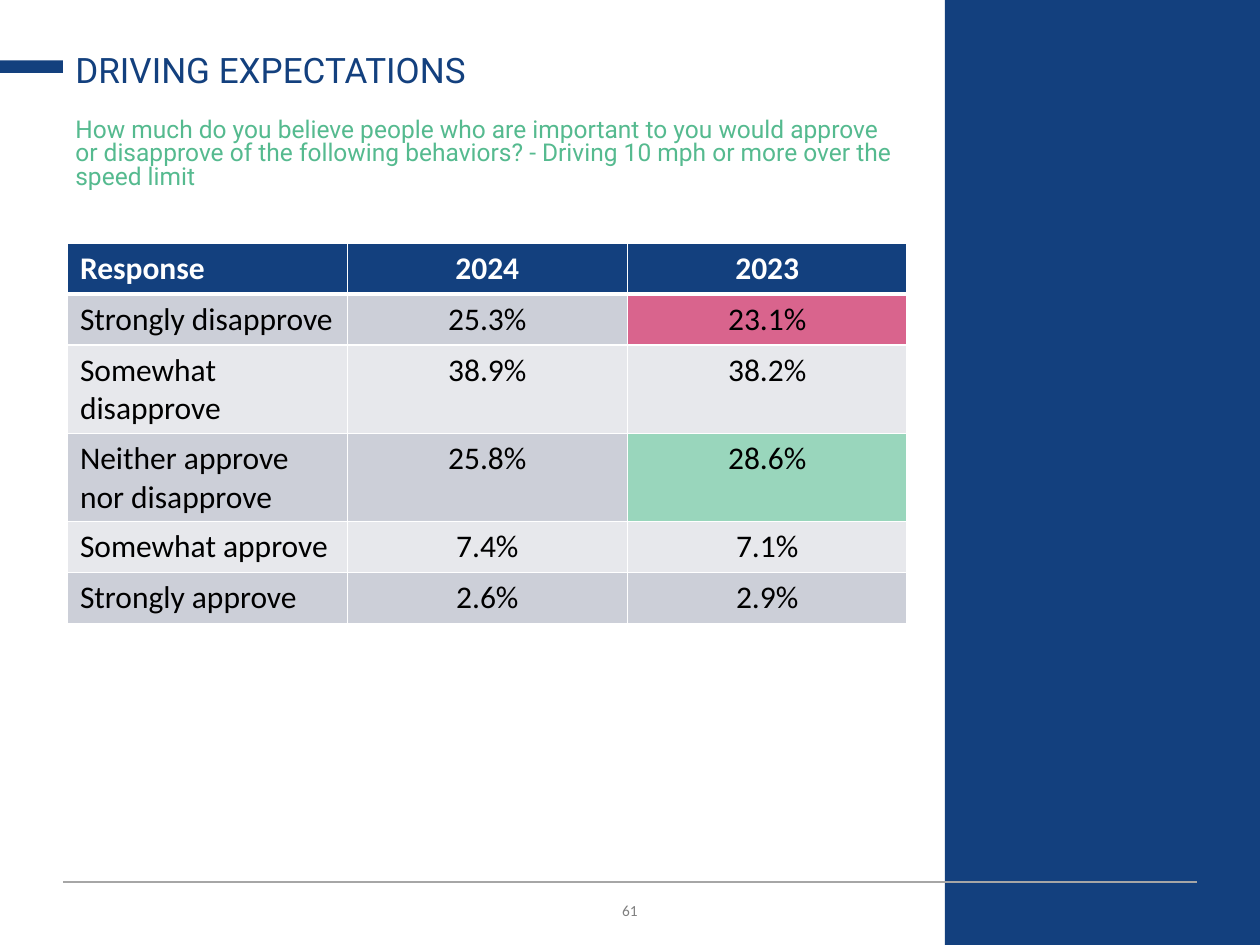
import dataclasses

import lxml.etree
import pptx
import pptx.dml.color
import pptx.enum.shapes
import pptx.enum.text
import pptx.oxml
import pptx.oxml.ns
import pptx.util

ALIGN = pptx.enum.text.PP_ALIGN
ANCHOR = pptx.enum.text.MSO_ANCHOR
COLUMNS, ROWS = 20, 15
WIDTH, HEIGHT = pptx.util.Inches(10), pptx.util.Inches(7.5)

RESPONSES = [
    ("Response", "2024", "2023"),
    ("Strongly disapprove", "25.3%", "23.1%"),
    ("Somewhat disapprove", "38.9%", "38.2%"),
    ("Neither approve nor disapprove", "25.8%", "28.6%"),
    ("Somewhat approve", "7.4%", "7.1%"),
    ("Strongly approve", "2.6%", "2.9%"),
]


@dataclasses.dataclass(frozen=True)
class Theme:
    """Colours, fonts and type sizes of the slide."""

    navy: str = "13407E"
    green: str = "55BA8F"
    white: str = "FFFFFF"
    black: str = "000000"
    rule: str = "A6A6A6"
    footer: str = "808080"
    bands: tuple = ("E7E8EC", "CCCFD8")
    lower: str = "D9648D"
    higher: str = "99D6BC"
    heading_font: str = "Roboto"
    body_font: str = "Calibri"
    title_size: int = 20
    question_size: int = 14
    table_size: int = 18
    footer_size: int = 11


THEME = Theme()
HIGHLIGHTS = {(1, 2): THEME.lower, (3, 2): THEME.higher}


def across(columns):
    """Return the width of a number of grid columns."""
    return round(WIDTH * columns / COLUMNS)


def down(rows):
    """Return the height of a number of grid rows."""
    return round(HEIGHT * rows / ROWS)


def area(column, row, columns, rows):
    """Return left, top, width and height of a grid area."""
    return across(column), down(row), across(columns), down(rows)


def rgb(value):
    """Return a colour from its hex value."""
    return pptx.dml.color.RGBColor.from_string(value)


def apply(target, values):
    """Set each named value on the target."""
    for name, value in values.items():
        setattr(target, name, value)


def write(frame, text, font, size, color, bold=False, **layout):
    """Write one formatted paragraph into a text frame and return it."""
    paragraph = frame.paragraphs[0]
    line = paragraph.add_run()
    line.text = text
    apply(paragraph, layout)
    apply(line.font, {"name": font, "size": pptx.util.Pt(size), "bold": bold})
    line.font.color.rgb = rgb(color)
    return line


def add_label(slide, place, anchor, *content, **layout):
    """Add a wrapped text box and return its run."""
    frame = slide.shapes.add_textbox(*place).text_frame
    apply(frame, {"word_wrap": True, "vertical_anchor": anchor})
    return write(frame, *content, **layout)


def add_block(slide, place):
    """Add a plain navy rectangle."""
    block = slide.shapes.add_shape(pptx.enum.shapes.MSO_SHAPE.RECTANGLE, *place)
    block.shadow.inherit = False
    block.fill.solid()
    block.fill.fore_color.rgb = rgb(THEME.navy)
    block.line.fill.background()


def add_rule(slide, start, end, row):
    """Add a thin horizontal line between two columns."""
    rule = slide.shapes.add_connector(
        pptx.enum.shapes.MSO_CONNECTOR.STRAIGHT,
        across(start), down(row), across(end), down(row))
    rule.line.color.rgb = rgb(THEME.rule)
    rule.line.width = pptx.util.Pt(0.75)
    lxml.etree.SubElement(
        rule.element.spPr, pptx.oxml.ns.qn("a:effectLst"))


def add_borders(cell, widths):
    """Draw white cell borders from a dict of sides and point widths."""
    properties = cell._tc.get_or_add_tcPr()
    for position, (side, width) in enumerate(widths.items()):
        border = pptx.oxml.parse_xml(
            f'<a:ln{side} {pptx.oxml.ns.nsdecls("a")} w="{pptx.util.Pt(width)}">'
            f'<a:solidFill><a:srgbClr val="{THEME.white}"/></a:solidFill>'
            f'</a:ln{side}>')
        properties.insert(position, border)


def add_responses(slide, place):
    """Add the table of responses by year."""
    table = slide.shapes.add_table(
        len(RESPONSES), len(RESPONSES[0]), *place).table
    for row, values in enumerate(RESPONSES):
        header = row == 0
        for column, value in enumerate(values):
            cell = table.cell(row, column)
            fill = THEME.navy if header else THEME.bands[row % 2]
            cell.fill.solid()
            cell.fill.fore_color.rgb = rgb(HIGHLIGHTS.get((row, column), fill))
            add_borders(cell, {"L": 1, "R": 1, "T": 3 if row == 1 else 1,
                               "B": 3 if header else 1})
            write(cell.text_frame, value, THEME.body_font, THEME.table_size,
                  THEME.white if header else THEME.black, bold=header,
                  alignment=ALIGN.CENTER if column else ALIGN.LEFT)


def main():
    """Build and save the slide."""
    deck = pptx.Presentation()
    apply(deck, {"slide_width": WIDTH, "slide_height": HEIGHT})
    slide = deck.slides.add_slide(deck.slide_layouts[6])

    page = add_label(slide, area(1, 14.12, 18, 0.6), ANCHOR.MIDDLE, "61",
                     THEME.body_font, THEME.footer_size, THEME.footer,
                     alignment=ALIGN.CENTER)
    page.font._element.set("cap", "small")
    add_block(slide, area(15, 0, 5, ROWS))
    add_rule(slide, 1, 19, 14)
    add_block(slide, area(0, 0.96, 1, 0.2))
    add_label(slide, area(1, 1.8, 13.4, 1.34), ANCHOR.TOP,
              "How much do you believe people who are important to you would "
              "approve or disapprove of the following behaviors? - Driving 10 "
              "mph or more over the speed limit",
              THEME.heading_font, THEME.question_size, THEME.green,
              line_spacing=0.8)
    add_label(slide, area(1, 0.58, 13.4, 0.96), ANCHOR.BOTTOM,
              "DRIVING EXPECTATIONS", THEME.heading_font, THEME.title_size,
              THEME.navy, line_spacing=0.9)
    add_responses(slide, area(1.07, 3.86, 13.33, 0.81 * len(RESPONSES)))
    deck.save("out.pptx")


if __name__ == "__main__":
    main()
